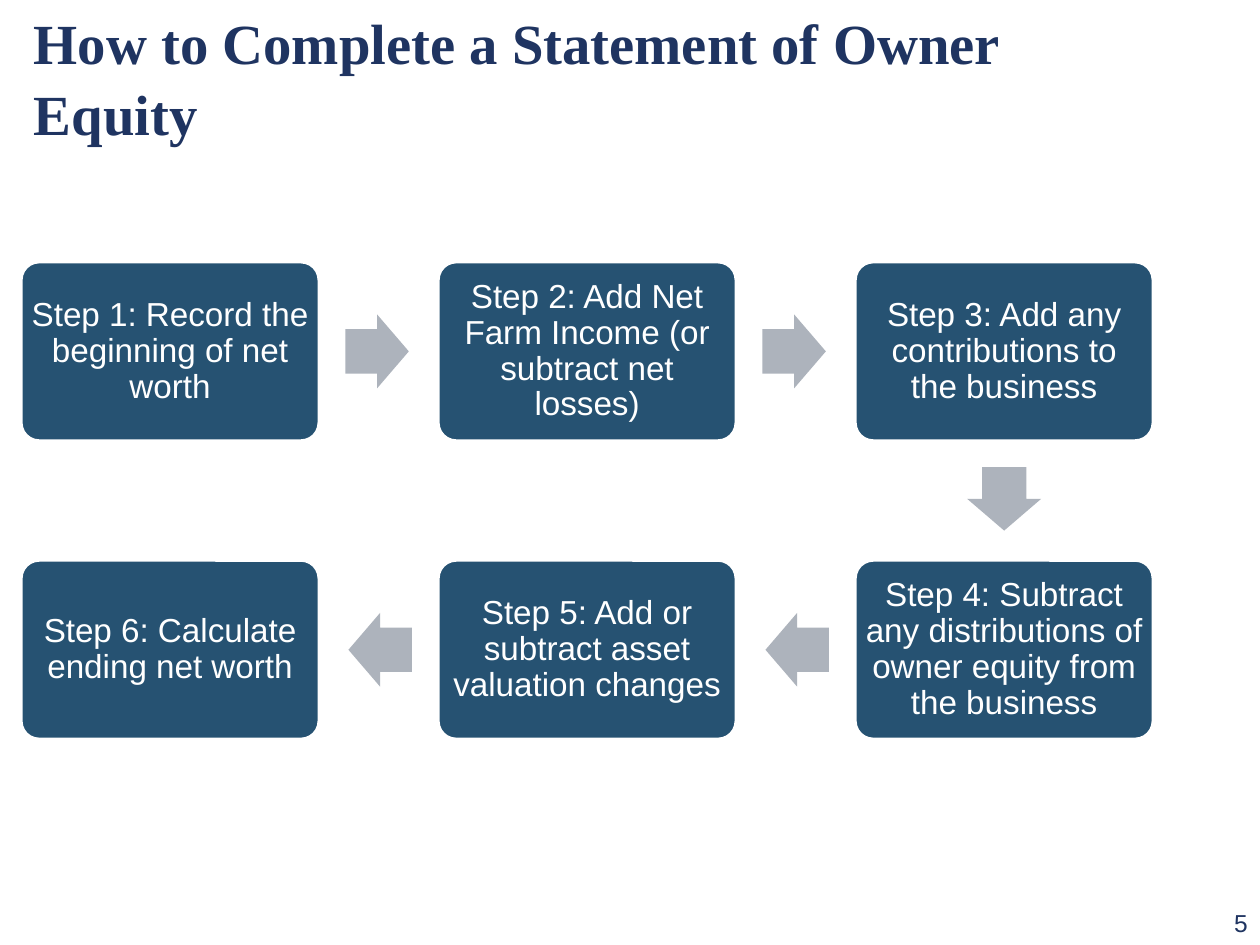
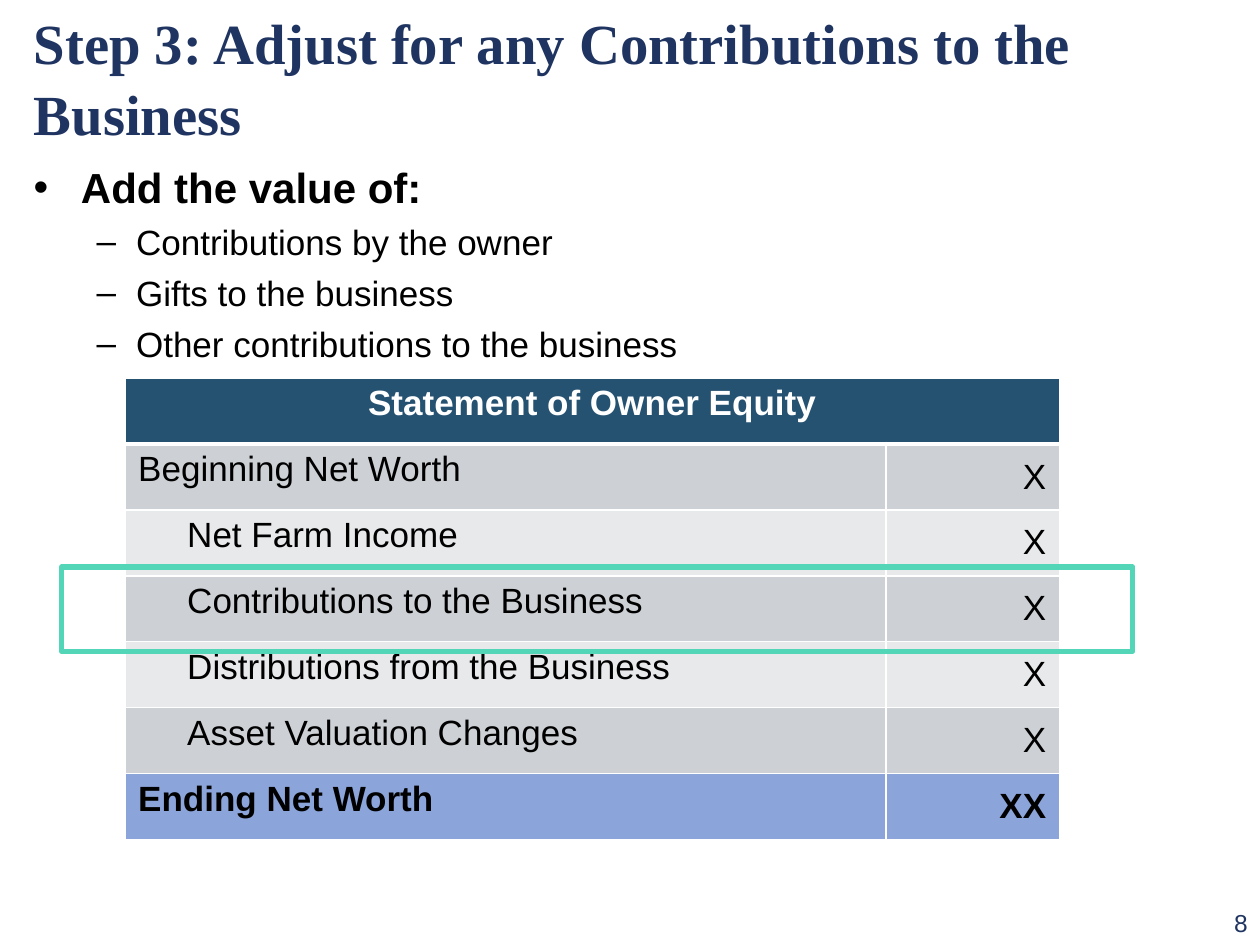
from lxml.etree import SubElement
from pptx import Presentation
from pptx.dml.color import RGBColor
from pptx.enum.shapes import MSO_SHAPE
from pptx.enum.text import MSO_ANCHOR, PP_ALIGN
from pptx.oxml.ns import qn
from pptx.util import Pt

NAVY, BLUE, GREY, MINT = "1F3461", "265272", "ADB3BC", "53D5B8"
WHITE, BLACK = "FFFFFF", "000000"
BAND_DARK, BAND_LIGHT, TOTAL = "CDD1D5", "E8E9EB", "8BA4DA"

STEPS_TITLE = "How to Complete a Statement of Owner Equity"
STEPS = [
    "Step 1: Record the beginning of net worth",
    "Step 2: Add Net Farm Income (or subtract net losses)",
    "Step 3: Add any contributions to the business",
    "Step 4: Subtract any distributions of owner equity from the business",
    "Step 5: Add or subtract asset valuation changes",
    "Step 6: Calculate ending net worth",
]

CONTRIBUTIONS_TITLE = "Step 3: Adjust for any Contributions to the Business"
BULLETS = [
    (0, "Add the value of:"),
    (1, "Contributions by the owner"),
    (1, "Gifts to the business"),
    (1, "Other contributions to the business"),
]
BULLET_LEVELS = [
    {"mark": "•", "left": 27, "hang": 27, "size": 24, "bold": True},
    {"mark": "–", "left": 58.5, "hang": 22.5, "size": 20, "bold": False},
]
TABLE_TITLE = "Statement of Owner Equity"
TABLE_ROWS = [
    ("Beginning Net Worth", "X", 0),
    ("Net Farm Income", "X", 28),
    ("Contributions to the Business", "X", 28),
    ("Distributions from the Business", "X", 28),
    ("Asset Valuation Changes", "X", 28),
    ("Ending Net Worth", "XX", 0),
]

COLUMNS = 3
CARD_WIDTH, CARD_HEIGHT = 170, 102
CARD_LEFT, CARD_TOP = 12.2, 149.8
PITCH_X, PITCH_Y = 238.3, 170.5
ARROW_LENGTH, ARROW_WIDTH, ARROW_GAP = 36.2, 42.2, 15.2


def color(value):
    return RGBColor.from_string(value)


def add_run(paragraph, text, size, value, bold=False, font="Arial"):
    run = paragraph.add_run()
    run.text = text
    run.font.name = font
    run.font.size = Pt(size)
    run.font.bold = bold
    run.font.color.rgb = color(value)


def add_text_box(slide, left, top, width, height):
    box = slide.shapes.add_textbox(Pt(left), Pt(top), Pt(width), Pt(height))
    box.text_frame.word_wrap = True
    return box.text_frame


def add_slide(presentation, title, number):
    slide = presentation.slides.add_slide(presentation.slide_layouts[6])
    frame = add_text_box(slide, 678.2, 515.5, 41.8, 24.5)
    frame.paragraphs[0].alignment = PP_ALIGN.RIGHT
    add_run(frame.paragraphs[0], number, 14, NAVY)
    frame = add_text_box(slide, 12.2, 12.2, 630, 62.6)
    frame.vertical_anchor = MSO_ANCHOR.MIDDLE
    frame.paragraphs[0].line_spacing = 1.04
    add_run(frame.paragraphs[0], title, 32.4, NAVY, True, "Times New Roman")
    return slide


def add_shape(slide, kind, left, top, width, height, fill=None, line=None, weight=0):
    shape = slide.shapes.add_shape(kind, Pt(left), Pt(top), Pt(width), Pt(height))
    shape.shadow.inherit = False
    if fill:
        shape.fill.solid()
        shape.fill.fore_color.rgb = color(fill)
    else:
        shape.fill.background()
    if line:
        shape.line.color.rgb = color(line)
        shape.line.width = Pt(weight)
    else:
        shape.line.fill.background()
    return shape


def add_card(slide, center, text):
    x, y = center
    card = add_shape(slide, MSO_SHAPE.ROUNDED_RECTANGLE, x - CARD_WIDTH / 2, y - CARD_HEIGHT / 2,
                     CARD_WIDTH, CARD_HEIGHT, BLUE, WHITE, 1.5)
    card.adjustments[0] = 0.1
    frame = card.text_frame
    frame.word_wrap = True
    frame.vertical_anchor = MSO_ANCHOR.MIDDLE
    frame.margin_left = frame.margin_right = Pt(2.8)
    frame.margin_top = frame.margin_bottom = Pt(2.8)
    paragraph = frame.paragraphs[0]
    paragraph.alignment = PP_ALIGN.CENTER
    paragraph.line_spacing = 0.9
    add_run(paragraph, text, 19, WHITE)


def add_arrow(slide, start, end):
    x, y = start
    if start[0] == end[0]:
        y += CARD_HEIGHT / 2 + ARROW_GAP + ARROW_LENGTH / 2
        rotation = 90
    else:
        direction = 1 if end[0] > start[0] else -1
        x += direction * (CARD_WIDTH / 2 + ARROW_GAP + ARROW_LENGTH / 2)
        rotation = 0 if direction > 0 else 180
    arrow = add_shape(slide, MSO_SHAPE.RIGHT_ARROW, x - ARROW_LENGTH / 2, y - ARROW_WIDTH / 2,
                      ARROW_LENGTH, ARROW_WIDTH, GREY)
    arrow.adjustments[0] = 0.6
    arrow.adjustments[1] = 0.5
    arrow.rotation = rotation


def step_center(index):
    row, column = divmod(index, COLUMNS)
    if row % 2:
        column = COLUMNS - 1 - column
    return (CARD_LEFT + CARD_WIDTH / 2 + column * PITCH_X,
            CARD_TOP + CARD_HEIGHT / 2 + row * PITCH_Y)


def add_bullets(slide):
    frame = add_text_box(slide, 12.2, 86.4, 648, 399.6)
    frame.margin_top = Pt(6)
    for index, (level, text) in enumerate(BULLETS):
        style = BULLET_LEVELS[level]
        paragraph = frame.paragraphs[0] if index == 0 else frame.add_paragraph()
        paragraph.level = level
        properties = paragraph._p.get_or_add_pPr()
        properties.set("marL", str(Pt(style["left"])))
        properties.set("indent", str(-Pt(style["hang"])))
        SubElement(properties, qn("a:buFont"), typeface="Arial")
        SubElement(properties, qn("a:buChar"), char=style["mark"])
        if index:
            paragraph.space_before = Pt(5)
        add_run(paragraph, text, style["size"], BLACK, style["bold"])


def set_borders(cell, top, bottom):
    properties = cell._tc.get_or_add_tcPr()
    for side, weight in (("L", 1), ("R", 1), ("T", top), ("B", bottom)):
        line = SubElement(properties, qn(f"a:ln{side}"), w=str(Pt(weight)))
        fill = SubElement(line, qn("a:solidFill"))
        SubElement(fill, qn("a:srgbClr"), val=WHITE)


def fill_cell(cell, text, fill, alignment, value=BLACK, bold=False, indent=0,
              anchor=MSO_ANCHOR.TOP):
    cell.fill.solid()
    cell.fill.fore_color.rgb = color(fill)
    cell.vertical_anchor = anchor
    cell.margin_left, cell.margin_right = Pt(7.7 + indent), Pt(7.7)
    cell.margin_top = cell.margin_bottom = Pt(3.6)
    paragraph = cell.text_frame.paragraphs[0]
    paragraph.alignment = alignment
    add_run(paragraph, text, 20, value, bold)


def add_statement(slide):
    count = len(TABLE_ROWS) + 1
    table = slide.shapes.add_table(count, 2, Pt(71.3), Pt(216), Pt(534.2), Pt(264)).table
    for column, width in zip(table.columns, (434.9, 99.3)):
        column.width = Pt(width)
    for index, row in enumerate(table.rows):
        row.height = Pt(37.7)
        for cell in row.cells:
            set_borders(cell, 3 if index == 1 else 1, 3 if index == 0 else 1)
    header = table.cell(0, 0)
    header.merge(table.cell(0, 1))
    fill_cell(header, TABLE_TITLE, BLUE, PP_ALIGN.CENTER, WHITE, True)
    for index, (label, amount, indent) in enumerate(TABLE_ROWS, 1):
        last = index == count - 1
        fill = TOTAL if last else BAND_DARK if index % 2 else BAND_LIGHT
        fill_cell(table.cell(index, 0), label, fill, PP_ALIGN.LEFT, bold=last, indent=indent)
        fill_cell(table.cell(index, 1), amount, fill, PP_ALIGN.RIGHT, bold=last,
                  anchor=MSO_ANCHOR.MIDDLE)


def build_steps(presentation):
    slide = add_slide(presentation, STEPS_TITLE, "5")
    centers = [step_center(index) for index in range(len(STEPS))]
    for center, text in zip(centers, STEPS):
        add_card(slide, center, text)
    for start, end in zip(centers, centers[1:]):
        add_arrow(slide, start, end)


def build_contributions(presentation):
    slide = add_slide(presentation, CONTRIBUTIONS_TITLE, "8")
    add_bullets(slide)
    add_statement(slide)
    add_shape(slide, MSO_SHAPE.RECTANGLE, 35.3, 324, 612, 48.2, line=MINT, weight=3)


def main():
    presentation = Presentation()
    presentation.slide_width, presentation.slide_height = Pt(720), Pt(540)
    build_steps(presentation)
    build_contributions(presentation)
    presentation.save("out.pptx")


if __name__ == "__main__":
    main()
